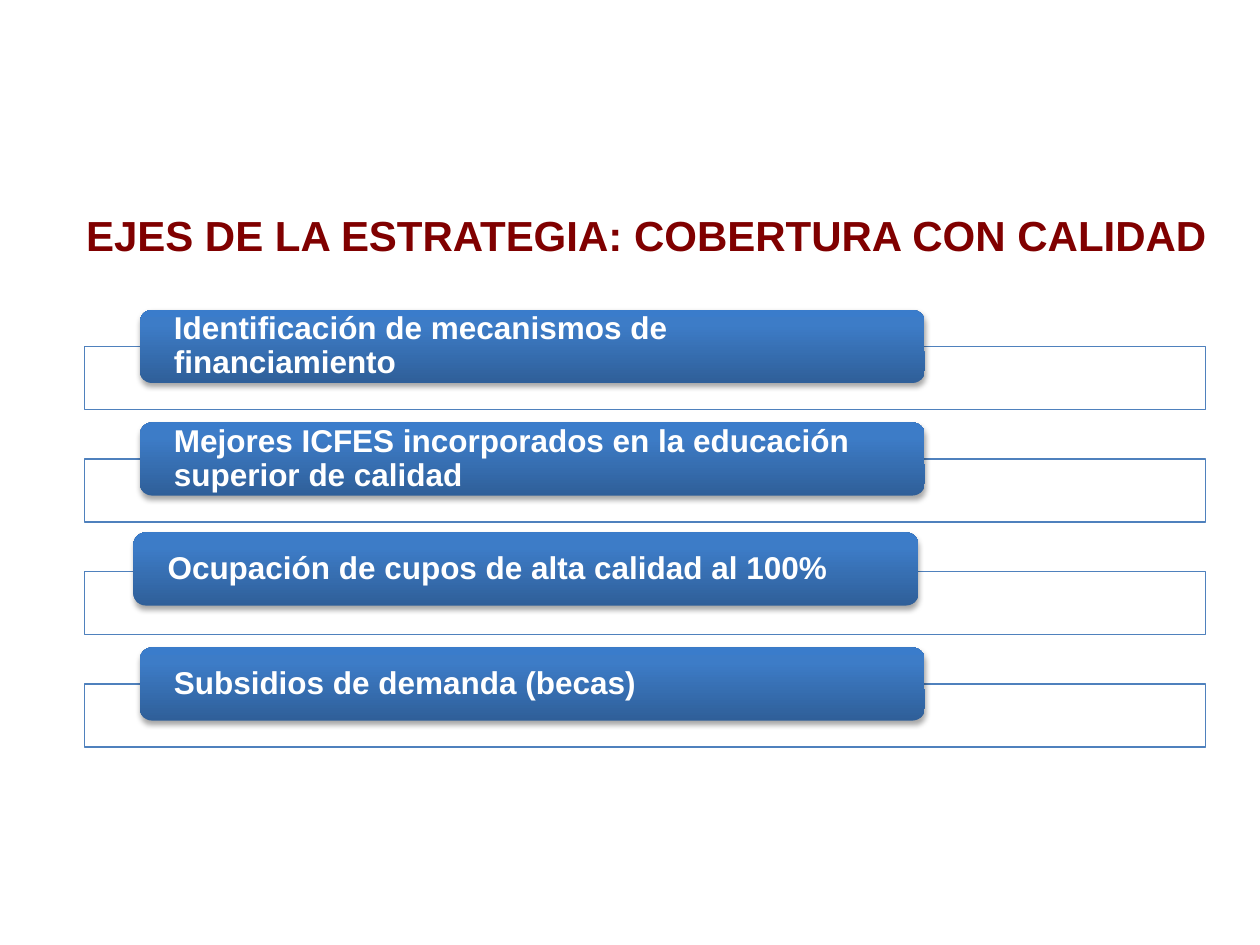
"""Build the slide on the axes of the coverage-with-quality strategy."""
from copy import deepcopy

from lxml.etree import SubElement
from pptx import Presentation
from pptx.dml.color import RGBColor
from pptx.enum.shapes import MSO_SHAPE as Shape
from pptx.enum.text import MSO_ANCHOR as Anchor, PP_ALIGN as Align
from pptx.oxml.ns import qn
from pptx.util import Inches, Pt

TITLE = "EJES DE LA ESTRATEGIA: COBERTURA CON CALIDAD"
AXES = [
    {"text": "Identificación de mecanismos de financiamiento", "shift": (0, 0)},
    {"text": "Mejores ICFES incorporados en la educación superior de calidad", "shift": (0, 0)},
    {"text": "Ocupación de cupos de alta calidad al 100%", "shift": (-0.05, -0.02)},
    {"text": "Subsidios de demanda (becas)", "shift": (0, 0)},
]

MAROON = RGBColor(0x80, 0x00, 0x00)
WHITE = RGBColor(0xFF, 0xFF, 0xFF)
FRAME_BLUE = RGBColor(0x4F, 0x81, 0xBD)
GRADIENT = [
    (0, RGBColor(0x2F, 0x5F, 0x99)),
    (0.8, RGBColor(0x3D, 0x7C, 0xC7)),
    (1, RGBColor(0x3A, 0x7C, 0xCB)),
]

TITLE_FONT = {"name": "Arial", "size": Pt(24), "bold": True}
AXIS_FONT = {"name": "Arial", "size": Pt(18), "bold": True}
TITLE_FRAME = {"word_wrap": True, "vertical_anchor": Anchor.MIDDLE}
AXIS_FRAME = TITLE_FRAME | {
    "margin_left": Inches(0.24), "margin_right": Inches(0.24),
    "margin_top": 0, "margin_bottom": 0,
}
TITLE_PARAGRAPH = {"alignment": Align.CENTER}
AXIS_PARAGRAPH = {"alignment": Align.LEFT, "line_spacing": 0.9}

FRAME_TOP, ROW_PITCH = 2.75, 0.893
LABEL_LEFT, LABEL_TOP = 1.11, 2.46
LABEL_WIDTH, LABEL_HEIGHT = 6.23, 0.58
INSET = 0.03


def apply(target, values):
    for name, value in values.items():
        setattr(target, name, value)


def add_text(slide, box, text, color, font, frame_format, paragraph_format):
    frame = slide.shapes.add_textbox(*map(Inches, box)).text_frame
    apply(frame, frame_format)
    paragraph = frame.paragraphs[0]
    paragraph.text = text
    apply(paragraph, paragraph_format)
    apply(paragraph.font, font)
    paragraph.font.color.rgb = color


def add_frame(slide, top):
    shape = slide.shapes.add_shape(
        Shape.RECTANGLE, *map(Inches, (0.67, top, 8.9, 0.5)))
    shape.shadow.inherit = False
    shape.fill.solid()
    shape.fill.fore_color.rgb = WHITE
    color = shape.fill._xPr.find(qn("a:solidFill"))[0]
    SubElement(color, qn("a:alpha"), val="90000")
    shape.line.color.rgb = FRAME_BLUE
    shape.line.width = Pt(0.75)


def add_label(slide, left, top):
    box = left, top, LABEL_WIDTH, LABEL_HEIGHT
    shape = slide.shapes.add_shape(Shape.ROUNDED_RECTANGLE, *map(Inches, box))
    shape.line.fill.background()
    shape.fill.gradient()
    shape.fill.gradient_angle = 90
    properties = shape._element.spPr
    stop_list = properties.find(qn("a:gradFill")).find(qn("a:gsLst"))
    stop_list.append(deepcopy(stop_list[0]))
    for stop, (position, color) in zip(shape.fill.gradient_stops, GRADIENT):
        stop.position = position
        stop.color.rgb = color
    shape.shadow.inherit = False
    shadow = SubElement(
        properties.find(qn("a:effectLst")), qn("a:outerShdw"),
        blurRad=str(Pt(3.1)), dist=str(Pt(1.8)), dir="5400000", rotWithShape="0")
    color = SubElement(shadow, qn("a:srgbClr"), val="000000")
    SubElement(color, qn("a:alpha"), val="35000")


def main():
    presentation = Presentation()
    presentation.slide_width, presentation.slide_height = Inches(10), Inches(7.5)
    slide = presentation.slides.add_slide(presentation.slide_layouts[6])
    add_text(slide, (0.24, 1.55, 9.78, 0.63), TITLE, MAROON,
             TITLE_FONT, TITLE_FRAME, TITLE_PARAGRAPH)
    for row, axis in enumerate(AXES):
        offset = row * ROW_PITCH
        shift_x, shift_y = axis["shift"]
        left, top = LABEL_LEFT + shift_x, LABEL_TOP + offset + shift_y
        add_frame(slide, FRAME_TOP + offset)
        add_label(slide, left, top)
        text_box = (left + INSET, top + INSET,
                    LABEL_WIDTH - 2 * INSET, LABEL_HEIGHT - 2 * INSET)
        add_text(slide, text_box, axis["text"], WHITE,
                 AXIS_FONT, AXIS_FRAME, AXIS_PARAGRAPH)
    presentation.save("out.pptx")


if __name__ == "__main__":
    main()
